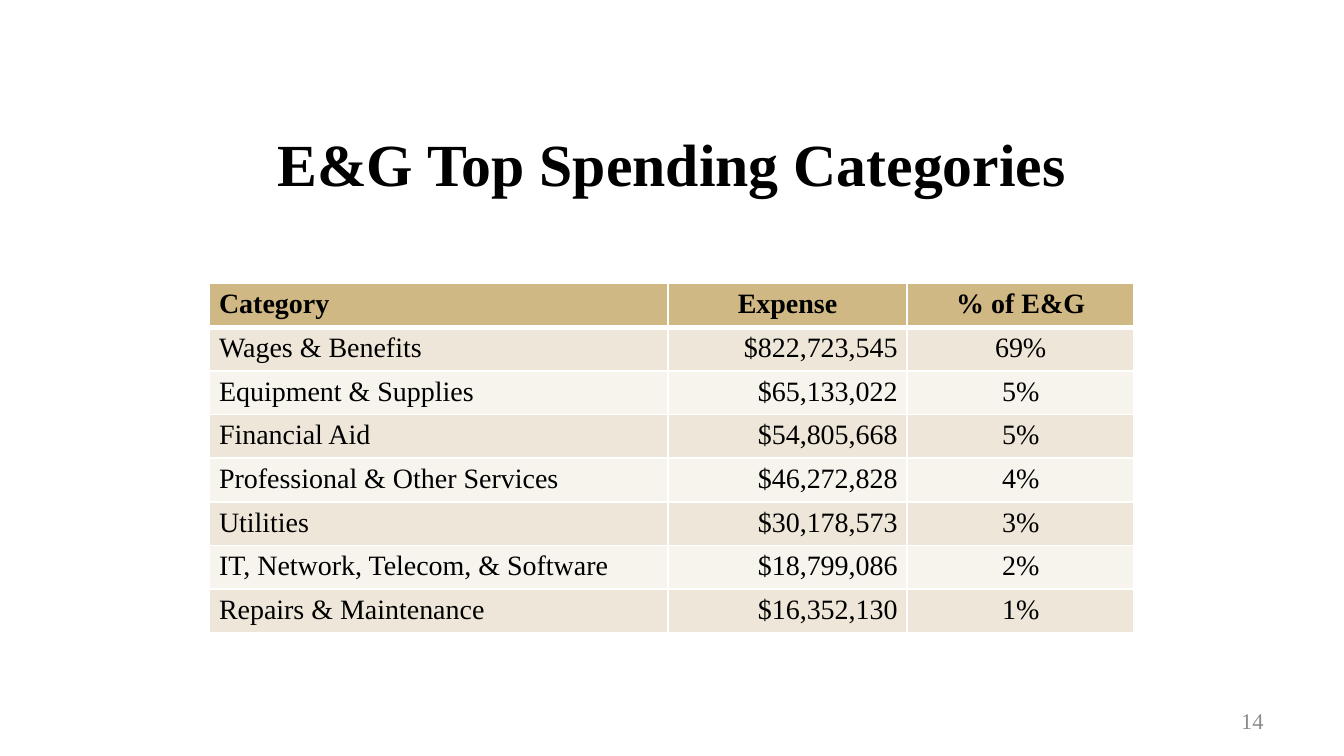
"""Build the slide of top E&G spending categories."""
from lxml.etree import SubElement
from pptx import Presentation
from pptx.dml.color import RGBColor
from pptx.enum.text import MSO_ANCHOR, PP_ALIGN
from pptx.oxml.ns import qn
from pptx.util import Inches, Pt

TITLE = "E&G Top Spending Categories"
PAGE = "14"
ROWS = [
    ("Category", "Expense", "% of E&G"),
    ("Wages & Benefits", "$822,723,545", "69%"),
    ("Equipment & Supplies", "$65,133,022", "5%"),
    ("Financial Aid", "$54,805,668", "5%"),
    ("Professional & Other Services", "$46,272,828", "4%"),
    ("Utilities", "$30,178,573", "3%"),
    ("IT, Network, Telecom, & Software", "$18,799,086", "2%"),
    ("Repairs & Maintenance", "$16,352,130", "1%"),
]
WIDE = 10
HIGH = WIDE * 9 / 16
WIDTHS = (3.41, 1.78, 1.69)
LEFT, MID, RIGHT = PP_ALIGN.LEFT, PP_ALIGN.CENTER, PP_ALIGN.RIGHT
HEAD_ALIGN = (LEFT, MID, MID)
BODY_ALIGN = (LEFT, RIGHT, MID)
THEME = {
    "font": "Times New Roman",
    "ink": "000000",
    "gray": "8C8C8C",
    "head": "D0B884",
    "bands": ("F7F3ED", "EEE6D9"),
    "rule": "FFFFFF",
    "title": 32,
    "cell": 15,
    "page": 12,
}
PADS = {
    "margin_left": Inches(0.07),
    "margin_right": Inches(0.07),
    "margin_top": Inches(0.04),
    "margin_bottom": Inches(0.03),
}


def assign(item, values):
    for name, value in values.items():
        setattr(item, name, value)


def write(frame, text, size, align, bold=False, color="ink"):
    para = frame.paragraphs[0]
    para.alignment = align
    run = para.add_run()
    run.text = text
    assign(run.font, {"name": THEME["font"], "size": Pt(THEME[size]), "bold": bold})
    run.font.color.rgb = RGBColor.from_string(THEME[color])


def add_text(slide, place, text, *style):
    frame = slide.shapes.add_textbox(*map(Inches, place)).text_frame
    assign(frame, {"word_wrap": True, "vertical_anchor": MSO_ANCHOR.MIDDLE})
    write(frame, text, *style)


def border(cell, sides):
    props = cell._tc.get_or_add_tcPr()
    for side, width in sides.items():
        line = SubElement(props, qn(f"a:ln{side}"), w=str(Pt(width)))
        fill = SubElement(line, qn("a:solidFill"))
        SubElement(fill, qn("a:srgbClr"), val=THEME["rule"])


def add_grid(slide):
    place = map(Inches, (1.56, 2.11, sum(WIDTHS), 2.6))
    table = slide.shapes.add_table(len(ROWS), len(WIDTHS), *place).table
    for col, width in zip(table.columns, WIDTHS):
        col.width = Inches(width)
    for r, row in enumerate(ROWS):
        head = r == 0
        tone = THEME["head"] if head else THEME["bands"][r % 2]
        for c, text in enumerate(row):
            cell = table.cell(r, c)
            assign(cell, PADS)
            border(cell, {"L": 1, "R": 1, "T": 3 if r == 1 else 1, "B": 3 if head else 1})
            cell.fill.solid()
            cell.fill.fore_color.rgb = RGBColor.from_string(tone)
            align = (HEAD_ALIGN if head else BODY_ALIGN)[c]
            write(cell.text_frame, text, "cell", align, head)


def main():
    deck = Presentation()
    assign(deck, {"slide_width": Inches(WIDE), "slide_height": Inches(HIGH)})
    slide = deck.slides.add_slide(deck.slide_layouts[6])
    add_text(slide, (0.5, 0.81, 9, 0.8), TITLE, "title", MID, True)
    add_text(slide, (7.17, 5.21, 2.33, 0.3), PAGE, "page", RIGHT, False, "gray")
    add_grid(slide)
    deck.save("out.pptx")


if __name__ == "__main__":
    main()
